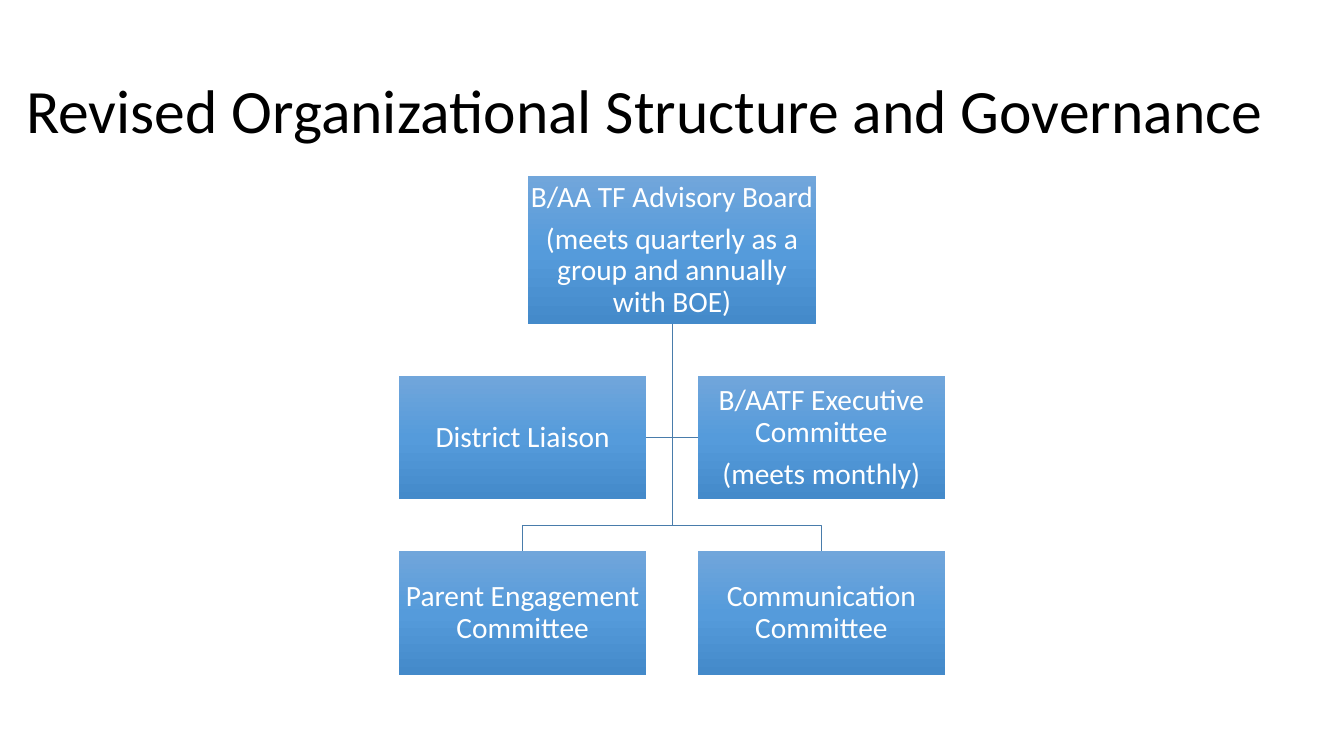
import copy

import pptx
import pptx.dml.color
import pptx.enum.shapes
import pptx.enum.text
import pptx.oxml.ns
import pptx.util

Pt = pptx.util.Pt
MIDDLE = pptx.enum.text.MSO_ANCHOR.MIDDLE
ALIGN = pptx.enum.text.PP_ALIGN


def color(value):
    return pptx.dml.color.RGBColor.from_string(value)


class OrgChart:
    font = "Calibri"
    gradient = ((0, "71A6DB"), (0.5, "559BDB"), (1, "448ACA"))
    line = "497CAB"

    def __init__(self, slide):
        self.slide = slide

    def set_text(self, tf, lines, size, ink, align, after=0):
        tf.word_wrap = True
        tf.vertical_anchor = MIDDLE
        tf.text = "\n".join(lines)
        for p in tf.paragraphs:
            p.alignment = align
            p.line_spacing = 0.9
            p.space_after = Pt(after)
            p.font.name = self.font
            p.font.size = Pt(size)
            p.font.color.rgb = color(ink)

    def title(self, text, x, y, w, h):
        sp = self.slide.shapes.title
        sp.left, sp.top, sp.width, sp.height = Pt(x), Pt(y), Pt(w), Pt(h)
        self.set_text(sp.text_frame, [text], 44, "000000", ALIGN.LEFT)

    def connector(self, points):
        start, *rest = [(Pt(x), Pt(y)) for x, y in points]
        builder = self.slide.shapes.build_freeform(*start)
        builder.add_line_segments(rest, close=False)
        sp = builder.convert_to_shape()
        sp.shadow.inherit = False
        sp.fill.background()
        sp.line.color.rgb = color(self.line)
        sp.line.width = Pt(0.5)

    def box(self, lines, x, y, w, h):
        sp = self.slide.shapes.add_shape(
            pptx.enum.shapes.MSO_SHAPE.RECTANGLE, Pt(x), Pt(y), Pt(w), Pt(h))
        sp.shadow.inherit = False
        sp.line.fill.background()
        sp.fill.gradient()
        sp.fill.gradient_angle = 270
        stops = sp.element.spPr.find(".//" + pptx.oxml.ns.qn("a:gsLst"))
        stops.insert(1, copy.deepcopy(stops[0]))
        for stop, (position, value) in zip(sp.fill.gradient_stops, self.gradient):
            stop.position = position
            stop.color.rgb = color(value)
        tf = sp.text_frame
        tf.margin_left = tf.margin_right = tf.margin_top = tf.margin_bottom = Pt(1)
        self.set_text(tf, lines, 21, "FFFFFF", ALIGN.CENTER, after=7.35)


def main():
    prs = pptx.Presentation()
    prs.slide_width, prs.slide_height = Pt(960), Pt(540)
    chart = OrgChart(prs.slides.add_slide(prs.slide_layouts[5]))
    chart.title("Revised Organizational Structure and Governance", 11.5, 28.8, 900, 104.4)

    center, gap = 480, 37
    board_y, board_w, board_h = 126, 205.6, 105.8
    box_w, box_h = 176.4, 88.2
    staff_y, committee_y = 268.6, 393.8
    board_bottom = board_y + board_h
    staff_middle = staff_y + box_h / 2
    branch_y = committee_y - gap / 2

    for side in (1, -1):
        inner = center + side * gap / 2
        chart.connector([(center, board_bottom), (center, staff_middle),
                         (inner, staff_middle)])
        outer = inner + side * box_w / 2
        chart.connector([(center, board_bottom), (center, branch_y),
                         (outer, branch_y), (outer, committee_y)])

    chart.box(["B/AA TF Advisory Board",
               "(meets quarterly as a group and annually with BOE)"],
              center - board_w / 2, board_y, board_w, board_h)
    rows = (
        (committee_y, (["Parent Engagement Committee"], ["Communication Committee"])),
        (staff_y, (["District Liaison"],
                   ["B/AATF Executive Committee", "(meets monthly)"])),
    )
    left = center - gap / 2 - box_w
    for y, boxes in rows:
        for column, lines in enumerate(boxes):
            chart.box(lines, left + column * (box_w + gap), y, box_w, box_h)

    prs.save("out.pptx")


if __name__ == "__main__":
    main()
